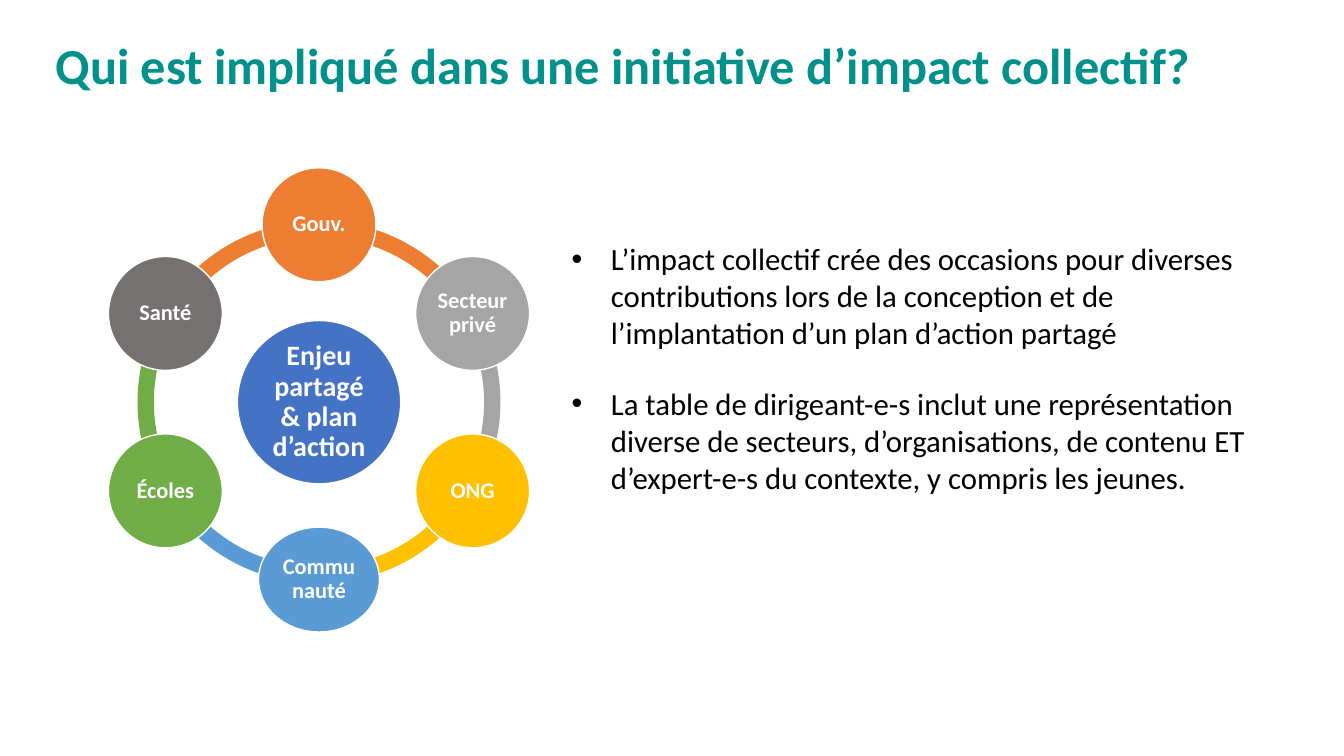
from math import cos, radians, sin

from pptx import Presentation
from pptx.dml.color import RGBColor
from pptx.enum.shapes import MSO_SHAPE
from pptx.enum.text import MSO_ANCHOR, MSO_AUTO_SIZE, PP_ALIGN
from pptx.util import Inches, Pt

COLORS = {
    "title": "00918B", "text": "000000", "white": "FFFFFF",
    "orange": "ED7D31", "grey": "A5A5A5", "yellow": "FFC000",
    "sky": "5B9BD5", "green": "70AD47", "stone": "767171", "blue": "4472C4",
}

# Grid of square cells, ten to the inch
CELL = Inches(0.1)
COLUMNS, ROWS = 133.33, 75
CENTRE = (31.65, 39.9)
ORBIT = 17.6
ARC_SIZE = 36
NODE_SIZE = (11.3, 11.3)
HUB_SIZE = (16.2, 16.2)

# Clockwise from the top: label, node colour, colour of the arc that follows, size
SECTORS = [
    ("Gouv.", "orange", "orange", NODE_SIZE),
    ("Secteur privé", "grey", "grey", NODE_SIZE),
    ("ONG", "yellow", "yellow", NODE_SIZE),
    ("Communauté", "sky", "sky", (12, 10.4)),
    ("Écoles", "green", "green", NODE_SIZE),
    ("Santé", "stone", "orange", NODE_SIZE),
]
STEP = 360 / len(SECTORS)

POINTS = [
    "L’impact collectif crée des occasions pour diverses contributions lors de "
    "la conception et de l’implantation d’un plan d’action partagé",
    "La table de dirigeant-e-s inclut une représentation diverse de secteurs, "
    "d’organisations, de contenu ET d’expert-e-s du contexte, y compris les jeunes.",
]


def cells(n):
    return round(n * CELL)


def rgb(name):
    return RGBColor.from_string(COLORS[name])


class SlideBuilder:
    font_name = "Calibri"

    def __init__(self, slide):
        self.s = slide

    def style(self, p, size, color, bold=False):
        p.font.name = self.font_name
        p.font.size = Pt(size)
        p.font.bold = bold
        p.font.color.rgb = rgb(color)

    def place(self, sp, left, top, width, height):
        sp.left, sp.top = cells(left), cells(top)
        sp.width, sp.height = cells(width), cells(height)
        tf = sp.text_frame
        tf.word_wrap = True
        tf.auto_size = MSO_AUTO_SIZE.NONE
        tf.vertical_anchor = MSO_ANCHOR.TOP
        return tf

    def title(self, text, *box):
        tf = self.place(self.s.shapes.title, *box)
        tf.text = text
        p = tf.paragraphs[0]
        p.alignment = PP_ALIGN.LEFT
        self.style(p, 36, "title", bold=True)

    def bullets(self, items, *box):
        tf = self.place(self.s.placeholders[1], *box)
        tf.text = "\n".join(items)
        for p in tf.paragraphs:
            pPr = p._p.get_or_add_pPr()
            pPr.set("marL", str(cells(3.9)))
            pPr.set("indent", str(-cells(3.9)))
            p.space_before, p.space_after = Pt(0), Pt(24)
            self.style(p, 22, "text")

    def centred(self, kind, x, y, width, height, color):
        """Add a filled preset shape around the point x, y."""
        sp = self.s.shapes.add_shape(
            kind, cells(x - width / 2), cells(y - height / 2),
            cells(width), cells(height))
        sp.shadow.inherit = False
        sp.fill.solid()
        sp.fill.fore_color.rgb = rgb(color)
        return sp

    def arc(self, start, color):
        sp = self.centred(MSO_SHAPE.BLOCK_ARC, *CENTRE, ARC_SIZE, ARC_SIZE, color)
        sp.line.fill.background()
        # Angles are stored in 60000ths of a degree, adjustments in 100000ths
        sp.adjustments[0] = start % 360 * 0.6
        sp.adjustments[1] = (start + STEP) % 360 * 0.6
        sp.adjustments[2] = 0.045

    def node(self, text, x, y, size, color, font_size=16, inset=0.2):
        sp = self.centred(MSO_SHAPE.OVAL, x, y, *size, color)
        sp.line.color.rgb = rgb("white")
        sp.line.width = Pt(1)
        tf = sp.text_frame
        tf.word_wrap = True
        tf.vertical_anchor = MSO_ANCHOR.MIDDLE
        tf.margin_left = tf.margin_right = cells(inset)
        tf.margin_top = tf.margin_bottom = cells(inset)
        tf.text = text
        p = tf.paragraphs[0]
        p.alignment = PP_ALIGN.CENTER
        p.line_spacing = 0.9
        self.style(p, font_size, "white", bold=True)


def main():
    prs = Presentation()
    prs.slide_width, prs.slide_height = cells(COLUMNS), cells(ROWS)
    b = SlideBuilder(prs.slides.add_slide(prs.slide_layouts[1]))

    b.title("Qui est impliqué dans une initiative d’impact collectif?",
            4.5, 2.9, 128.8, 7.1)
    b.bullets(POINTS, 55.7, 23.3, 71.8, 26.6)

    for i, (_, _, arc_color, _) in enumerate(SECTORS):
        b.arc(270 + i * STEP, arc_color)

    b.node("Enjeu partagé & plan d’action", *CENTRE, HUB_SIZE, "blue",
           font_size=20, inset=0.3)
    for i, (label, color, _, size) in enumerate(SECTORS):
        angle = radians(270 + i * STEP)
        b.node(label, CENTRE[0] + ORBIT * cos(angle),
               CENTRE[1] + ORBIT * sin(angle), size, color)

    prs.save("out.pptx")


if __name__ == "__main__":
    main()
